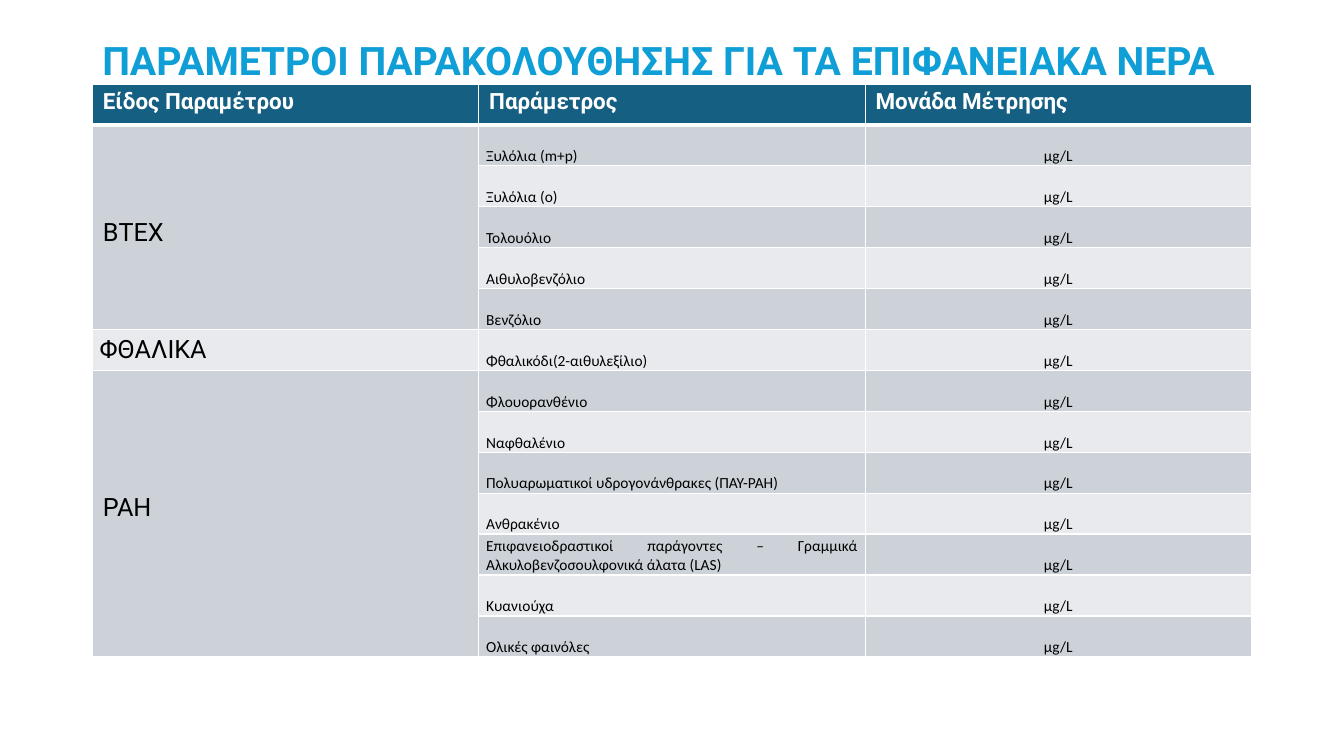
from dataclasses import dataclass

from lxml.etree import SubElement
from pptx import Presentation
from pptx.dml.color import RGBColor as RGB
from pptx.enum.text import MSO_ANCHOR as Anchor, PP_ALIGN as Align
from pptx.oxml.ns import qn
from pptx.util import Pt

PX = 9525  # EMU per px, 96 px to the inch


@dataclass(frozen=True)
class Theme:
    title: str = "0F9ED5"
    head: str = "156082"
    dark: str = "CCD2D8"
    light: str = "E8EAED"
    white: str = "FFFFFF"
    black: str = "000000"
    sans: str = "Roboto"
    body: str = "Calibri"
    title_pt: int = 28
    head_pt: int = 16
    group_pt: int = 18
    body_pt: int = 11


T = Theme()

# Layout in px
LEFT, TOP, COL, ROW = 88, 80, 368, 39
WIDE = (10, 5, 10, 5)
SLIM = (7, 0, 7, 0)

TITLE = "ΠΑΡΑΜΕΤΡΟΙ ΠΑΡΑΚΟΛΟΥΘΗΣΗΣ ΓΙΑ ΤΑ ΕΠΙΦΑΝΕΙΑΚΑ ΝΕΡΑ"
HEADS = ["Είδος Παραμέτρου", "Παράμετρος", "Μονάδα Μέτρησης"]
UNIT = "μg/L"
# Group name, anchor, insets, parameters
GROUPS = [
    ("ΒΤΕΧ", Anchor.TOP, (10, 89, 10, 5),
     ["Ξυλόλια (m+p)", "Ξυλόλια (o)", "Τολουόλιο", "Αιθυλοβενζόλιο", "Βενζόλιο"]),
    ("ΦΘΑΛΙΚΑ", Anchor.MIDDLE, SLIM, ["Φθαλικόδι(2-αιθυλεξίλιο)"]),
    ("PAH", Anchor.TOP, (10, 117, 10, 5),
     ["Φλουορανθένιο", "Ναφθαλένιο", "Πολυαρωματικοί υδρογονάνθρακες (ΠΑΥ-ΡΑΗ)",
      "Ανθρακένιο",
      "Επιφανειοδραστικοί παράγοντες – Γραμμικά Αλκυλοβενζοσουλφονικά άλατα (LAS)",
      "Κυανιούχα", "Ολικές φαινόλες"]),
]


def add_run(par, text, size, color, font=T.sans, bold=False):
    run = par.add_run()
    run.text = text
    run.font.size = Pt(size)
    run.font.name = font
    run.font.bold = bold
    run.font.color.rgb = RGB.from_string(color)


def add_title(slide):
    box = slide.shapes.add_textbox(LEFT * PX, 19 * PX, 3 * COL * PX, 81 * PX)
    frame = box.text_frame
    frame.word_wrap = True
    frame.vertical_anchor = Anchor.MIDDLE
    par = frame.paragraphs[0]
    par.line_spacing = 0.9
    add_run(par, TITLE, T.title_pt, T.title, bold=True)


def style_cell(cell, row):
    """White borders, thick under the header, and banded fill."""
    props = cell._tc.get_or_add_tcPr()
    thick = {(0, "B"), (1, "T")}
    for side in "LRTB":
        width = 3 if (row, side) in thick else 1
        line = SubElement(props, qn(f"a:ln{side}"), w=str(Pt(width)))
        fill = SubElement(line, qn("a:solidFill"))
        SubElement(fill, qn("a:srgbClr"), val=T.white)
    cell.fill.solid()
    color = T.head if row == 0 else T.dark if row % 2 else T.light
    cell.fill.fore_color.rgb = RGB.from_string(color)


def set_text(cell, text, size, color, pad=SLIM, anchor=Anchor.BOTTOM,
             align=Align.LEFT, after=0, **face):
    (cell.margin_left, cell.margin_top,
     cell.margin_right, cell.margin_bottom) = [side * PX for side in pad]
    cell.vertical_anchor = anchor
    par = cell.text_frame.paragraphs[0]
    par.alignment = align
    par.space_after = Pt(after)
    add_run(par, text, size, color, **face)


def add_grid(slide):
    count = 1 + sum(len(names) for *_, names in GROUPS)
    grid = slide.shapes.add_table(count, len(HEADS), LEFT * PX, TOP * PX,
                                  len(HEADS) * COL * PX, count * ROW * PX).table
    for col in grid.columns:
        col.width = COL * PX
    for idx, row in enumerate(grid.rows):
        row.height = ROW * PX
        for cell in row.cells:
            style_cell(cell, idx)

    # Header
    for col, text in enumerate(HEADS):
        set_text(grid.cell(0, col), text, T.head_pt, T.white, WIDE, Anchor.TOP,
                 bold=True)

    # Groups with their parameters
    row = 1
    for group, anchor, pad, names in GROUPS:
        first = grid.cell(row, 0)
        if len(names) > 1:
            first.merge(grid.cell(row + len(names) - 1, 0))
        set_text(first, group, T.group_pt, T.black, pad, anchor)
        for name in names:
            for col, text, align in ((1, name, Align.JUSTIFY), (2, UNIT, Align.CENTER)):
                set_text(grid.cell(row, col), text, T.body_pt, T.black,
                         align=align, after=6, font=T.body)
            row += 1


def main():
    deck = Presentation()
    deck.slide_width, deck.slide_height = 1280 * PX, 720 * PX
    slide = deck.slides.add_slide(deck.slide_layouts[6])
    add_title(slide)
    add_grid(slide)
    deck.save("out.pptx")


if __name__ == "__main__":
    main()
